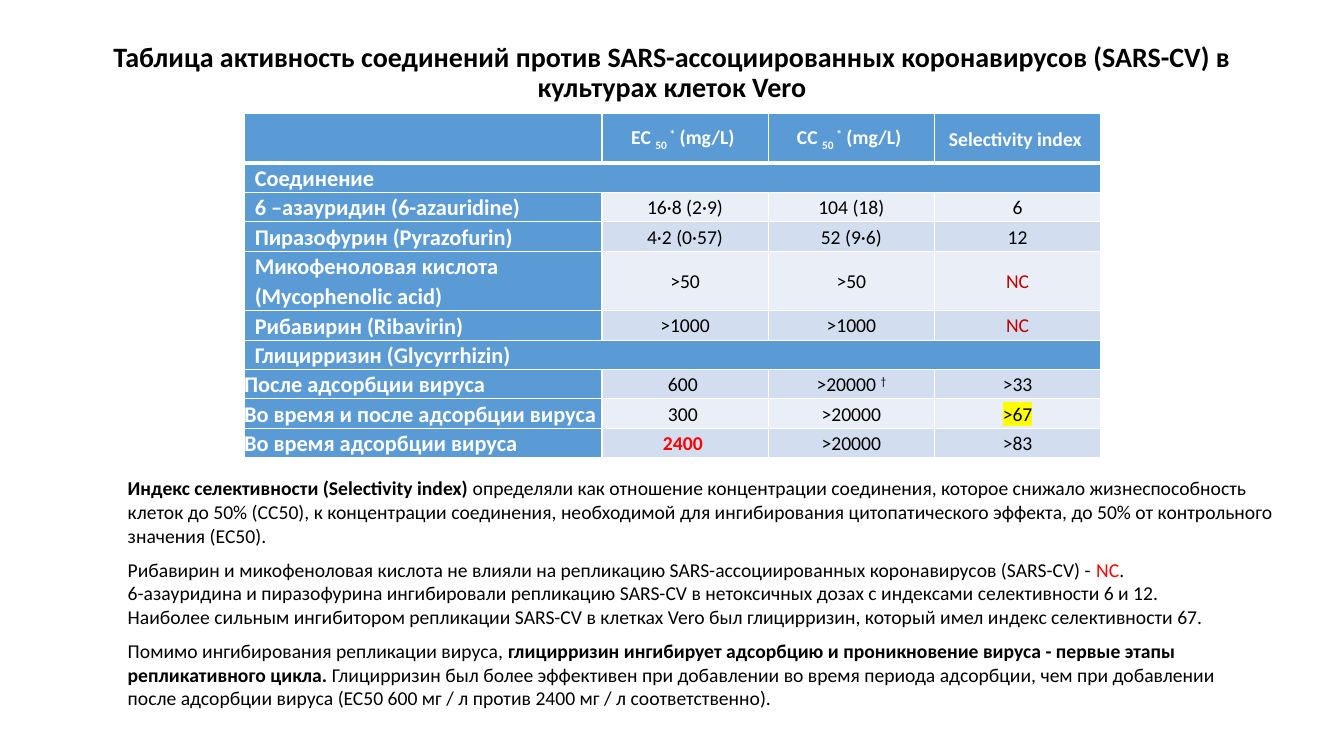
from lxml import etree
from pptx import Presentation
from pptx.dml.color import RGBColor
from pptx.enum.text import MSO_ANCHOR, PP_ALIGN
from pptx.oxml.ns import qn
from pptx.util import Cm, Pt

LEFT, CENTER = PP_ALIGN.LEFT, PP_ALIGN.CENTER
TOP, MIDDLE = MSO_ANCHOR.TOP, MSO_ANCHOR.MIDDLE

# Content: a text is a string or a list of (words, style) pieces
TITLE = ("Таблица активность соединений против SARS-ассоциированных "
         "коронавирусов (SARS-CV) в культурах клеток Vero")


def concentration(name):
    return [(name + " ", ""), ("50 ", "subscript"), ("*", "superscript"), (" (mg/L) ", "")]


HEADER = ["", concentration("EC"), concentration("CC"), "Selectivity index "]
COMPOUNDS = [
    ["Соединение"],
    ["6 –азауридин (6-azauridine)", "16·8 (2·9)", "104 (18)", "6"],
    ["Пиразофурин (Pyrazofurin)", "4·2 (0·57)", "52 (9·6)", "12"],
    ["Микофеноловая кислота (Mycophenolic acid)", ">50", ">50", [("NC", "dark red")]],
    ["Рибавирин (Ribavirin)", ">1000", ">1000", [("NC", "dark red")]],
    ["Глицирризин (Glycyrrhizin)"],
]
ADSORPTION = [
    ["После адсорбции вируса", "600 ", [(">20000 ", ""), ("†", "superscript")], ">33"],
    ["Во время и после адсорбции вируса", "300 ", ">20000", [(">67", "highlight")]],
    ["Во время адсорбции вируса", [("2400 ", "bold red")], ">20000", ">83"],
]
ROWS = [HEADER] + COMPOUNDS + ADSORPTION

# Each note: width in cm, paragraphs
NOTES = [
    (30.18, [
        [("Индекс селективности (Selectivity index) ", "bold"),
         ("определяли как отношение концентрации соединения, которое снижало "
          "жизнеспособность клеток до 50% (CC50), к концентрации соединения, необходимой "
          "для ингибирования цитопатического эффекта, до 50% от контрольного значения "
          "(EC50).", "")],
    ]),
    (29.57, [
        [("Рибавирин и микофеноловая кислота не влияли на репликацию "
          "SARS-ассоциированных коронавирусов (SARS-CV) - ", ""), ("NC", "red"), (".", "")],
        "6-азауридина и пиразофурина ингибировали репликацию SARS-CV в нетоксичных дозах "
        "с индексами селективности 6 и 12.",
        "Наиболее сильным ингибитором репликации SARS-CV в клетках Vero был глицирризин, "
        "который имел индекс селективности 67.",
    ]),
    (28.52, [
        [("Помимо ингибирования репликации вируса, ", ""),
         ("глицирризин ингибирует адсорбцию и проникновение вируса - первые этапы "
          "репликативного цикла. ", "bold"),
         ("Глицирризин был более эффективен при добавлении во время периода адсорбции, "
          "чем при добавлении после адсорбции вируса (ЕС50 600 мг / л против 2400 мг / л "
          "соответственно).", "")],
    ]),
]


class Theme:
    font = "Calibri"
    title_size, label_size, text_size = 20, 16, 14
    black, white = "000000", "FFFFFF"
    red, dark_red, marker = "FF0000", "C00000", "FFFF00"
    label_fill, bands = "5B9BD5", ("EAEFF7", "D2DEEF")
    border, header_border = 1, 3


# Layout in cm
COLUMN_WIDTHS = [9.02] + [4.19] * 3
HEADER_HEIGHT, ROW_HEIGHT, DOUBLE_HEIGHT = 1.24, 0.74, 1.5
DOUBLE_ROW = 4
TABLE_LEFT, TABLE_TOP = 6.15, 2.87
LABEL_INSET = 0.27
NOTE_LEFT, NOTE_TOP, NOTE_HEIGHT, NOTE_STEP = 2.97, 11.88, 2.05, 2.05


def style_run(run, style):
    font = run.font
    if "bold" in style:
        font.bold = True
    if "red" in style:
        color = Theme.dark_red if "dark" in style else Theme.red
        font.color.rgb = RGBColor.from_string(color)
    if style in ("subscript", "superscript"):
        run._r.get_or_add_rPr().set("baseline", "-25000" if style == "subscript" else "30000")
    if style == "highlight":
        highlight = etree.SubElement(run._r.get_or_add_rPr(), qn("a:highlight"))
        etree.SubElement(highlight, qn("a:srgbClr"), val=Theme.marker)


def write(paragraph, text, size, color=Theme.black, bold=False, align=LEFT):
    paragraph.alignment = align
    font = paragraph.font
    font.name, font.size, font.bold = Theme.font, Pt(size), bold
    font.color.rgb = RGBColor.from_string(color)
    pieces = [(text, "")] if isinstance(text, str) else text
    for words, style in pieces:
        run = paragraph.add_run()
        run.text = words
        style_run(run, style)


def add_text(slide, left, top, width, height, anchor=TOP):
    frame = slide.shapes.add_textbox(Cm(left), Cm(top), Cm(width), Cm(height)).text_frame
    frame.word_wrap = True
    frame.vertical_anchor = anchor
    return frame


def add_borders(cell, row_index):
    thick_side = {0: "lnB", 1: "lnT"}.get(row_index)
    for side in ("lnL", "lnR", "lnT", "lnB"):
        width = Theme.header_border if side == thick_side else Theme.border
        line = etree.SubElement(cell._tc.get_or_add_tcPr(), qn("a:" + side), w=str(Pt(width)))
        fill = etree.SubElement(line, qn("a:solidFill"))
        etree.SubElement(fill, qn("a:srgbClr"), val=Theme.white)


def fill_cell(cell, row_index, column_index, text):
    is_header, is_label = row_index == 0, column_index == 0
    is_span = len(ROWS[row_index]) == 1
    is_blue = is_header or is_label or is_span
    add_borders(cell, row_index)
    cell.fill.solid()
    cell.fill.fore_color.rgb = RGBColor.from_string(
        Theme.label_fill if is_blue else Theme.bands[row_index % 2])
    is_inset = is_label and 0 < row_index <= len(COMPOUNDS)
    cell.margin_left = cell.margin_right = Cm(LABEL_INSET if is_inset else 0)
    cell.margin_top = cell.margin_bottom = 0
    cell.vertical_anchor = MIDDLE
    if text:
        paragraph = cell.text_frame.paragraphs[0]
        paragraph.line_spacing, paragraph.space_after = 1.07, Pt(8)
        write(paragraph, text,
              Theme.label_size if is_label else Theme.text_size,
              Theme.white if is_blue else Theme.black,
              is_blue, LEFT if is_label else CENTER)


def add_activity_table(slide):
    heights = [ROW_HEIGHT] * len(ROWS)
    heights[0], heights[DOUBLE_ROW] = HEADER_HEIGHT, DOUBLE_HEIGHT
    table = slide.shapes.add_table(
        len(ROWS), len(COLUMN_WIDTHS), Cm(TABLE_LEFT), Cm(TABLE_TOP),
        Cm(sum(COLUMN_WIDTHS)), Cm(sum(heights))).table
    table.first_row = table.horz_banding = False
    for column, width in zip(table.columns, COLUMN_WIDTHS):
        column.width = Cm(width)
    for row_index, texts in enumerate(ROWS):
        table.rows[row_index].height = Cm(heights[row_index])
        for column_index in range(len(COLUMN_WIDTHS)):
            text = texts[column_index] if column_index < len(texts) else ""
            fill_cell(table.cell(row_index, column_index), row_index, column_index, text)
        if len(texts) == 1:
            table.cell(row_index, 0).merge(table.cell(row_index, len(COLUMN_WIDTHS) - 1))


def main():
    presentation = Presentation()
    presentation.slide_width, presentation.slide_height = Cm(33.87), Cm(19.05)
    slide = presentation.slides.add_slide(presentation.slide_layouts[6])

    # Title
    title = add_text(slide, 2.33, 1.02, 29.21, 1.68, MIDDLE).paragraphs[0]
    title.line_spacing = 0.9
    write(title, TITLE, Theme.title_size, bold=True, align=CENTER)

    # Table
    add_activity_table(slide)

    # Notes
    for index, (width, texts) in enumerate(NOTES):
        frame = add_text(slide, NOTE_LEFT, NOTE_TOP + index * NOTE_STEP, width, NOTE_HEIGHT)
        for number, text in enumerate(texts):
            paragraph = frame.add_paragraph() if number else frame.paragraphs[0]
            write(paragraph, text, Theme.text_size)

    presentation.save("out.pptx")


if __name__ == "__main__":
    main()
